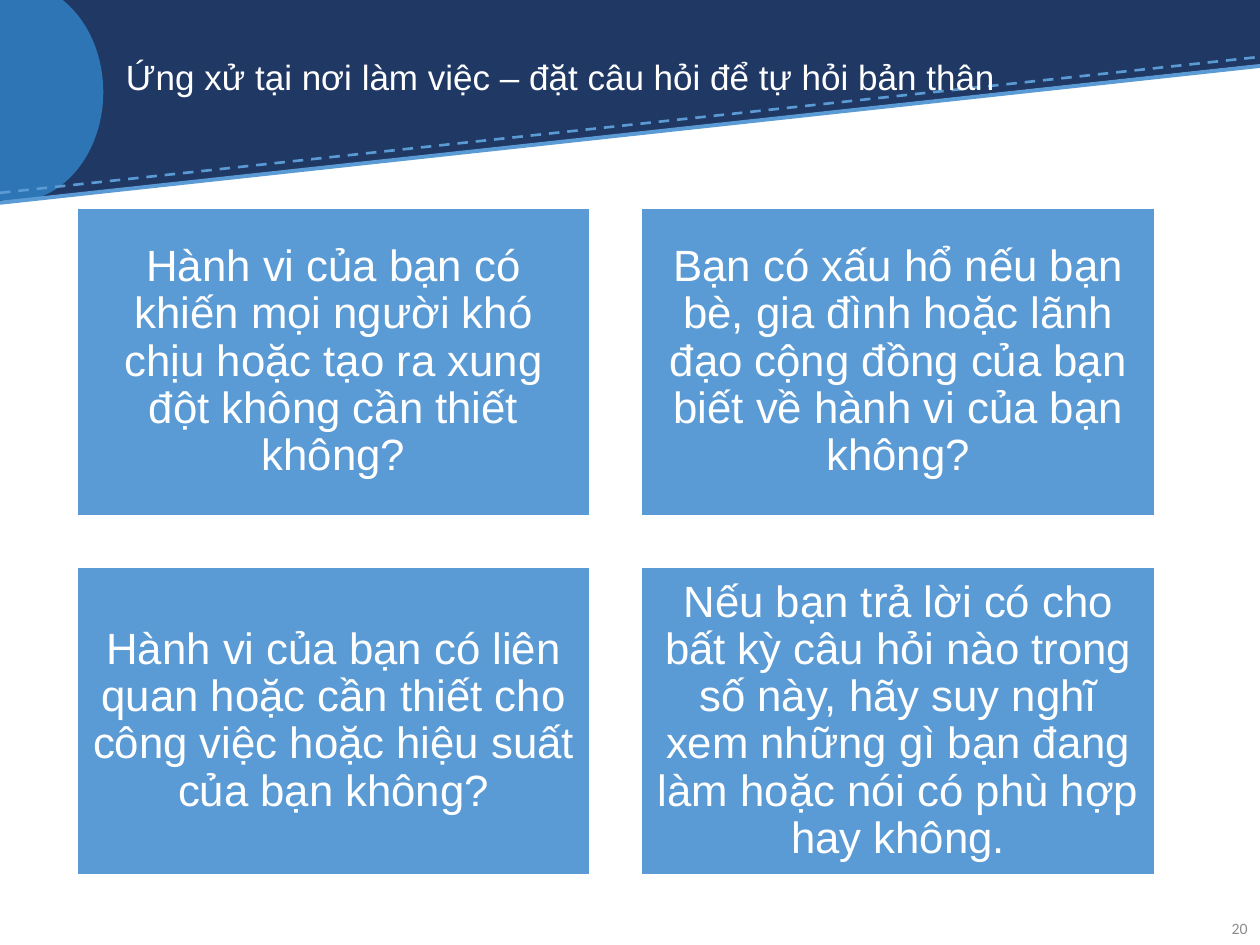
from lxml import etree
from pptx import Presentation
from pptx.dml.color import RGBColor
from pptx.enum.dml import MSO_LINE
from pptx.enum.shapes import MSO_CONNECTOR, MSO_SHAPE
from pptx.enum.text import MSO_ANCHOR, PP_ALIGN
from pptx.oxml.ns import qn
from pptx.util import Pt

RECTANGLE = MSO_SHAPE.RECTANGLE
TRIANGLE = MSO_SHAPE.RIGHT_TRIANGLE
OVAL = MSO_SHAPE.OVAL
STRAIGHT = MSO_CONNECTOR.STRAIGHT
DASH = MSO_LINE.DASH
MIDDLE = MSO_ANCHOR.MIDDLE
LEFT, CENTER, RIGHT = PP_ALIGN.LEFT, PP_ALIGN.CENTER, PP_ALIGN.RIGHT

NAVY = RGBColor(0x20, 0x38, 0x64)
BLUE = RGBColor(0x2E, 0x75, 0xB6)
LIGHT_BLUE = RGBColor(0x5B, 0x9B, 0xD5)
GRAY = RGBColor(0x8C, 0x8C, 0x8C)
WHITE = RGBColor(0xFF, 0xFF, 0xFF)

SLIDE_WIDTH, SLIDE_HEIGHT = 720, 540
TITLE = "Ứng xử tại nơi làm việc – đặt câu hỏi để tự hỏi bản thân"
QUESTIONS = [
    "Hành vi của bạn có khiến mọi người khó chịu hoặc tạo ra xung đột không cần thiết không?",
    "Bạn có xấu hổ nếu bạn bè, gia đình hoặc lãnh đạo cộng đồng của bạn biết về hành vi của bạn không?",
    "Hành vi của bạn có liên quan hoặc cần thiết cho công việc hoặc hiệu suất của bạn không?",
    "Nếu bạn trả lời có cho bất kỳ câu hỏi nào trong số này, hãy suy nghĩ xem những gì bạn đang "
    "làm hoặc nói có phù hợp hay không.",
]


def add_filled_shape(slide, kind, box, color):
    shape = slide.shapes.add_shape(kind, *map(Pt, box))
    shape.shadow.inherit = False
    shape.fill.solid()
    shape.fill.fore_color.rgb = color
    shape.line.fill.background()
    return shape


def add_line(slide, start, end, width):
    line = slide.shapes.add_connector(STRAIGHT, *map(Pt, start + end))
    line.line.color.rgb = LIGHT_BLUE
    line.line.width = Pt(width)
    etree.SubElement(line.element.spPr, qn("a:effectLst"))
    return line


def write_text(shape, text, size, color, alignment, font="Arial", spacing=0.9):
    frame = shape.text_frame
    frame.word_wrap = True
    frame.vertical_anchor = MIDDLE
    paragraph = frame.paragraphs[0]
    paragraph.text = text
    paragraph.alignment = alignment
    paragraph.line_spacing = spacing
    paragraph.font.name = font
    paragraph.font.size = Pt(size)
    paragraph.font.color.rgb = color


def add_banner(slide, left, top, width, height):
    """Draw the slanted band, its two edge lines, the disc and the title."""
    band_height = 37.2
    right, bottom = left + width, top + height
    add_filled_shape(slide, RECTANGLE, (left, top, width, band_height), NAVY)
    slant_top = top + band_height - 0.4
    slant = add_filled_shape(slide, TRIANGLE, (left, slant_top, width, bottom - slant_top), NAVY)
    slant.element.spPr.find(qn("a:xfrm")).set("flipV", "1")
    add_filled_shape(slide, OVAL, (left - 42.5, top - 10, 101.5, 125.3), BLUE)
    dashed = add_line(slide, (left, bottom - 5), (right, top + 32.5), 1.5)
    dashed.line.dash_style = DASH
    add_line(slide, (left, bottom + 0.7), (right, top + band_height + 0.5), 2.25)
    title = slide.shapes.add_textbox(Pt(left + 64.8), Pt(top + 14.4), Pt(579.6), Pt(62))
    write_text(title, TITLE, 20, WHITE, LEFT)


def add_question_grid(slide, left, top, width, height):
    columns, gap = 2, 29.5
    rows = len(QUESTIONS) // columns
    card_width = (width - gap * (columns - 1)) / columns
    card_height = (height - gap * (rows - 1)) / rows
    for index, question in enumerate(QUESTIONS):
        row, column = divmod(index, columns)
        box = (left + column * (card_width + gap), top + row * (card_height + gap),
               card_width, card_height)
        card = add_filled_shape(slide, RECTANGLE, box, LIGHT_BLUE)
        card.line.color.rgb = WHITE
        card.line.width = Pt(1)
        frame = card.text_frame
        frame.margin_left = frame.margin_right = Pt(7.2)
        frame.margin_top = frame.margin_bottom = Pt(7.2)
        write_text(card, question, 25, WHITE, CENTER)


def add_slide_number(slide, left, top, width, height):
    number = slide.shapes.add_textbox(Pt(left), Pt(top), Pt(width), Pt(height))
    write_text(number, "20", 9, GRAY, RIGHT, font="Calibri", spacing=1.0)


def main():
    presentation = Presentation()
    presentation.slide_width = Pt(SLIDE_WIDTH)
    presentation.slide_height = Pt(SLIDE_HEIGHT)
    slide = presentation.slides.add_slide(presentation.slide_layouts[6])
    add_banner(slide, 0, 0, SLIDE_WIDTH, 115.2)
    add_question_grid(slide, 44, 119, 615.8, 381)
    add_slide_number(slide, 682, 516, 38, 29)
    presentation.save("out.pptx")


if __name__ == "__main__":
    main()
